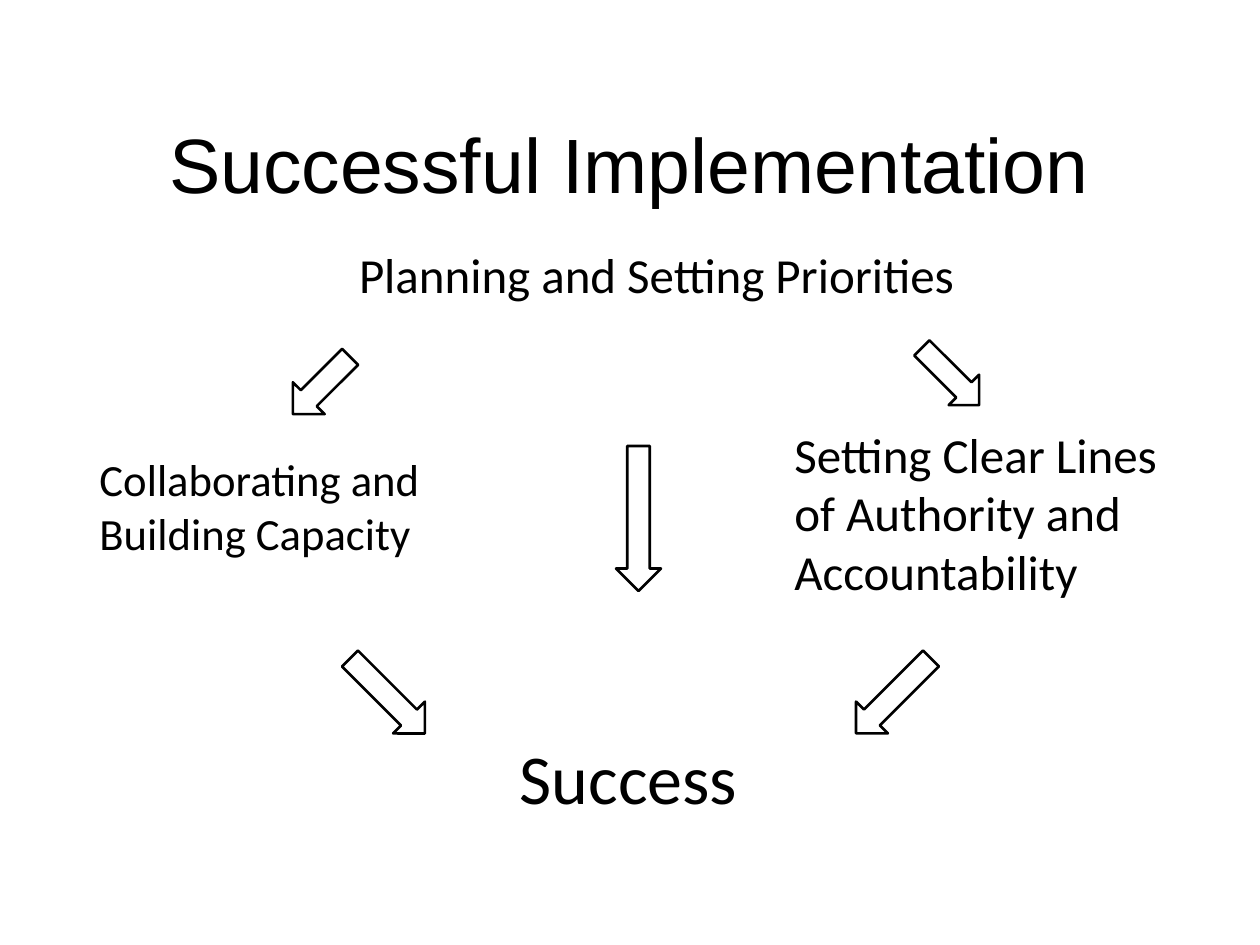
from typing import NamedTuple

from pptx import Presentation
from pptx.dml.color import RGBColor
from pptx.enum.shapes import MSO_SHAPE as Shape
from pptx.enum.text import MSO_ANCHOR as Anchor, PP_ALIGN as Align
from pptx.util import Emu, Pt

INK = "000000"


class Box(NamedTuple):
    x: int
    y: int
    w: int
    h: int


class Label(NamedTuple):
    text: str
    box: Box
    size: float
    align: Align


class Arrow(NamedTuple):
    box: Box
    turn: int


LABELS = [
    Label("Planning and Setting Priorities", Box(305, 238, 703, 72), 28, Align.CENTER),
    Label("Collaborating and Building Capacity", Box(87, 446, 387, 121), 25.5, Align.LEFT),
    Label("Setting Clear Lines of Authority and Accountability",
          Box(782, 418, 391, 192), 28, Align.LEFT),
    Label("Success", Box(504, 728, 249, 97), 40, Align.CENTER),
]
ARROWS = [
    Arrow(Box(299, 345, 45, 81), 45),
    Arrow(Box(929, 336, 43, 81), 315),
    Arrow(Box(616, 446, 45, 145), 0),
    Arrow(Box(365, 643, 45, 106), 315),
    Arrow(Box(871, 643, 45, 106), 45),
]


def px(n: int) -> Emu:
    """Turn pixels into EMU."""
    return Emu(n * 914400 // 126)


def color(code: str) -> RGBColor:
    """Turn a hex string into a colour."""
    return RGBColor.from_string(code)


def write(frame, text: str, size: float, face: str, align: Align) -> None:
    """Fill a text frame with one styled paragraph."""
    frame.word_wrap = True
    para = frame.paragraphs[0]
    para.text = text
    para.alignment = align
    para.font.size = Pt(size)
    para.font.name = face
    para.font.color.rgb = color(INK)


def head(slide, text: str, box: Box) -> None:
    """Place and style the slide title."""
    title = slide.shapes.title
    title.left, title.top, title.width, title.height = map(px, box)
    title.text_frame.vertical_anchor = Anchor.MIDDLE
    write(title.text_frame, text, 44, "Arial", Align.CENTER)


def label(slide, item: Label) -> None:
    """Draw one text label."""
    shape = slide.shapes.add_textbox(*map(px, item.box))
    write(shape.text_frame, item.text, item.size, "Calibri", item.align)


def arrow(slide, item: Arrow) -> None:
    """Draw one outlined down arrow, turned by its angle."""
    shape = slide.shapes.add_shape(Shape.DOWN_ARROW, *map(px, item.box))
    shape.rotation = item.turn
    shape.shadow.inherit = False
    shape.fill.background()
    shape.line.color.rgb = color(INK)
    shape.line.width = Pt(1.5)


def main() -> None:
    """Build and save the slide."""
    deck = Presentation()
    deck.slide_width, deck.slide_height = px(1260), px(945)
    slide = deck.slides.add_slide(deck.slide_layouts[5])
    head(slide, "Successful Implementation", Box(94, 84, 1071, 158))
    for item in LABELS:
        label(slide, item)
    for item in ARROWS:
        arrow(slide, item)
    deck.save("out.pptx")


if __name__ == "__main__":
    main()
